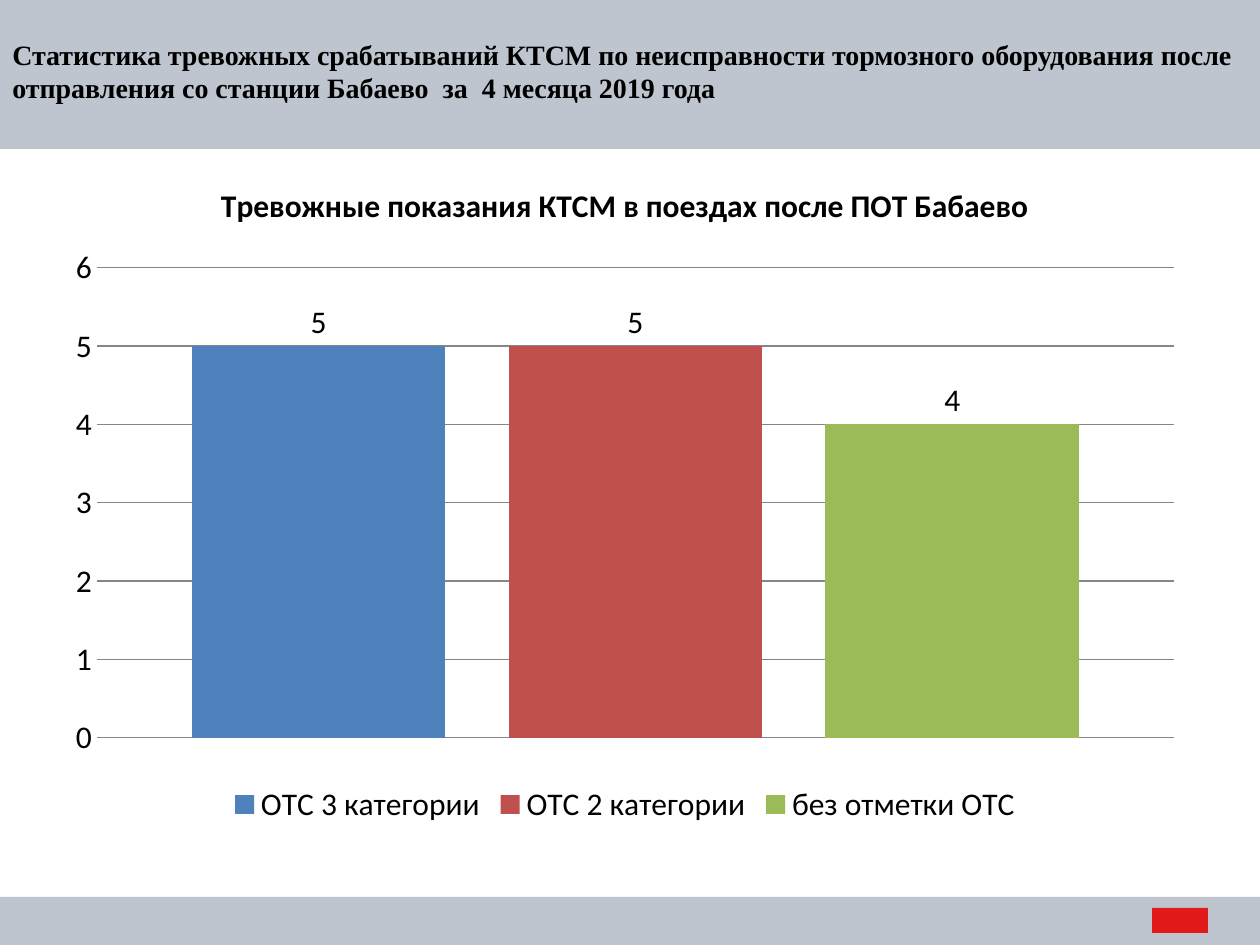
from dataclasses import dataclass

from pptx import Presentation
from pptx import util as u
from pptx.chart.data import CategoryChartData
from pptx.dml.color import RGBColor
from pptx.enum import chart as charts, shapes, text

EMU_PER_PX = 914400 / 126
BAND_GREY = "BFC5CE"
EMBLEM_RED = "E21A1A"
GRID_GREY = "868686"
BLACK = "000000"


@dataclass(frozen=True)
class Block:
    left: int
    top: int
    width: int
    height: int
    color: str


@dataclass(frozen=True)
class Category:
    name: str
    count: int
    color: str


BLOCKS = [
    Block(0, 0, 1260, 149, BAND_GREY),
    Block(0, 897, 1260, 48, BAND_GREY),
    Block(1152, 908, 56, 25, EMBLEM_RED),
]
CATEGORIES = [
    Category("ОТС 3 категории", 5, "4F81BD"),
    Category("ОТС 2 категории", 5, "C0504D"),
    Category("без отметки ОТС", 4, "9BBB59"),
]
HEADING = ("Статистика тревожных срабатываний КТСМ по неисправности тормозного "
           "оборудования после отправления со станции Бабаево  за  4 месяца 2019 года")
CHART_TITLE = "Тревожные показания КТСМ в поездах после ПОТ Бабаево"


def px(*lengths: int) -> list[u.Emu]:
    return [u.Emu(round(length * EMU_PER_PX)) for length in lengths]


def rgb(color: str) -> RGBColor:
    return RGBColor.from_string(color)


def style_font(font, name: str, size: int, bold: bool = False) -> None:
    font.name = name
    font.size = u.Pt(size)
    font.bold = bold
    font.color.rgb = rgb(BLACK)


def draw_block(slide, block: Block) -> None:
    area = px(block.left, block.top, block.width, block.height)
    rectangle = slide.shapes.add_shape(shapes.MSO_SHAPE.RECTANGLE, *area)
    rectangle.shadow.inherit = False
    rectangle.fill.solid()
    rectangle.fill.fore_color.rgb = rgb(block.color)
    rectangle.line.fill.background()


def draw_heading(slide) -> None:
    frame = slide.shapes.add_textbox(*px(0, 31, 1260, 81)).text_frame
    frame.word_wrap = True
    frame.auto_size = text.MSO_AUTO_SIZE.SHAPE_TO_FIT_TEXT
    frame.text = HEADING
    style_font(frame.paragraphs[0].runs[0].font, "Times New Roman", 16, bold=True)


def style_axes(chart) -> None:
    chart.category_axis.visible = False
    counts = chart.value_axis
    counts.minimum_scale, counts.maximum_scale, counts.major_unit = 0, 6, 1
    counts.major_tick_mark = charts.XL_TICK_MARK.NONE
    counts.minor_tick_mark = charts.XL_TICK_MARK.NONE
    counts.format.line.fill.background()
    counts.has_major_gridlines = True
    grid = counts.major_gridlines.format.line
    grid.color.rgb = rgb(GRID_GREY)
    grid.width = u.Pt(0.75)


def draw_chart(slide, categories: list[Category]) -> None:
    counts = CategoryChartData(number_format="General")
    counts.categories = ["1"]
    for category in categories:
        counts.add_series(category.name, [category.count])
    chart = slide.shapes.add_chart(
        charts.XL_CHART_TYPE.COLUMN_CLUSTERED, *px(53, 158, 1144, 672), counts).chart
    style_font(chart.font, "Calibri", 18)

    chart.has_title = True
    title = chart.chart_title.text_frame
    title.text = CHART_TITLE
    style_font(title.paragraphs[0].runs[0].font, "Calibri", 18, bold=True)
    chart.chart_title.include_in_layout = False

    chart.has_legend = True
    chart.legend.position = charts.XL_LEGEND_POSITION.BOTTOM
    chart.legend.include_in_layout = False
    style_axes(chart)

    plot = chart.plots[0]
    plot.gap_width = 75
    plot.overlap = -25
    plot.vary_by_categories = False
    for series, category in zip(plot.series, categories):
        series.format.fill.solid()
        series.format.fill.fore_color.rgb = rgb(category.color)
        labels = series.data_labels
        labels.show_value = True
        labels.position = charts.XL_LABEL_POSITION.OUTSIDE_END


def main() -> None:
    deck = Presentation()
    deck.slide_width, deck.slide_height = px(1260, 945)
    slide = deck.slides.add_slide(deck.slide_layouts[6])
    for block in BLOCKS:
        draw_block(slide, block)
    draw_heading(slide)
    draw_chart(slide, CATEGORIES)
    deck.save("out.pptx")


if __name__ == "__main__":
    main()
